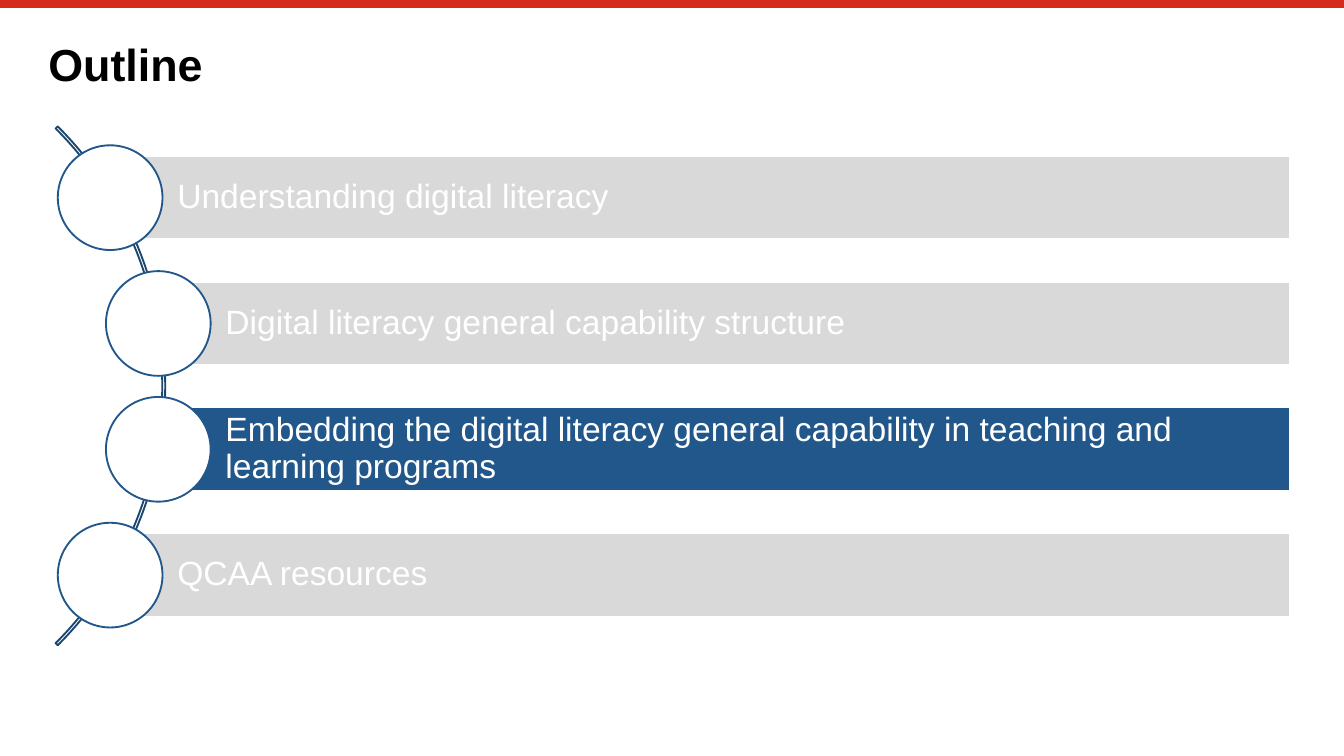
from dataclasses import dataclass

from lxml import etree
from pptx import Presentation, util as u
from pptx.dml.color import RGBColor
from pptx.enum import shapes, text
from pptx.oxml import ns

Pt = u.Pt


@dataclass(frozen=True)
class Theme:
    font: str = "Arial"
    title_size: float = 24
    item_size: float = 18
    red: str = "D52B1E"
    black: str = "000000"
    white: str = "FFFFFF"
    grey: str = "D9D9D9"
    blue: str = "21578A"
    dark_blue: str = "1A466F"


THEME = Theme()

WIDTH, HEIGHT = 720, 405
BAR_RIGHT, BAR_HEIGHT = 691.2, 44.8
FIRST_BAR_TOP, BAR_PITCH = 83.5, 67.4
CIRCLE = 56.1
OUTER_LEFT, INNER_LEFT = 59, 84.8

ITEMS = [
    ("Understanding digital literacy", OUTER_LEFT, THEME.grey),
    ("Digital literacy general capability structure", INNER_LEFT, THEME.grey),
    ("Embedding the digital literacy general capability in teaching and "
     "learning programs", INNER_LEFT, THEME.blue),
    ("QCAA resources", OUTER_LEFT, THEME.grey),
]


def rgb(color):
    return RGBColor.from_string(color)


def add_text(sp, content, size, color, insets, bold=False):
    tf = sp.text_frame
    tf.word_wrap = True
    tf.vertical_anchor = text.MSO_ANCHOR.MIDDLE
    tf.margin_left, tf.margin_top, tf.margin_right, tf.margin_bottom = map(Pt, insets)
    p = tf.paragraphs[0]
    p.alignment = text.PP_ALIGN.LEFT
    p.line_spacing = 0.9
    r = p.add_run()
    r.text = content
    r.font.name = THEME.font
    r.font.size = Pt(size)
    r.font.bold = bold
    r.font.color.rgb = rgb(color)


def add_shape(s, kind, left, top, width, height, line, fill=None):
    sp = s.shapes.add_shape(kind, Pt(left), Pt(top), Pt(width), Pt(height))
    sp.shadow.inherit = False
    if fill:
        sp.fill.solid()
        sp.fill.fore_color.rgb = rgb(fill)
    else:
        sp.fill.background()
    sp.line.color.rgb = rgb(line)
    sp.line.width = Pt(1)
    return sp


def add_top_rule(s):
    rule = s.shapes.add_connector(
        shapes.MSO_CONNECTOR.STRAIGHT, Pt(0), Pt(2.1), Pt(WIDTH), Pt(2.1))
    rule.line.color.rgb = rgb(THEME.red)
    rule.line.width = Pt(4.2)
    etree.SubElement(rule._element.spPr, ns.qn("a:effectLst"))


def add_title(s, content):
    box = s.shapes.add_textbox(Pt(25.9), Pt(21.6), Pt(668.9), Pt(28.1))
    add_text(box, content, THEME.title_size, THEME.black, (0, 0, 0, 0), bold=True)


def add_arc(s):
    arc = add_shape(s, shapes.MSO_SHAPE.BLOCK_ARC, -304.6, 10.2, 393.1, 393.1,
                    THEME.dark_blue)
    for i, value in enumerate((189, 27, 0.004)):
        arc.adjustments[i] = value


def add_item(s, content, left, top, fill):
    bar = add_shape(s, shapes.MSO_SHAPE.RECTANGLE, left, top, BAR_RIGHT - left,
                    BAR_HEIGHT, THEME.white, fill)
    add_text(bar, content, THEME.item_size, THEME.white, (36, 3.6, 3.6, 3.6))
    add_shape(s, shapes.MSO_SHAPE.OVAL, left - CIRCLE / 2,
              top + (BAR_HEIGHT - CIRCLE) / 2, CIRCLE, CIRCLE,
              THEME.blue, THEME.white)


def main():
    prs = Presentation()
    prs.slide_width, prs.slide_height = Pt(WIDTH), Pt(HEIGHT)
    s = prs.slides.add_slide(prs.slide_layouts[6])
    add_top_rule(s)
    add_title(s, "Outline")
    add_arc(s)
    for i, (content, left, fill) in enumerate(ITEMS):
        add_item(s, content, left, FIRST_BAR_TOP + i * BAR_PITCH, fill)
    prs.save("out.pptx")


if __name__ == "__main__":
    main()
